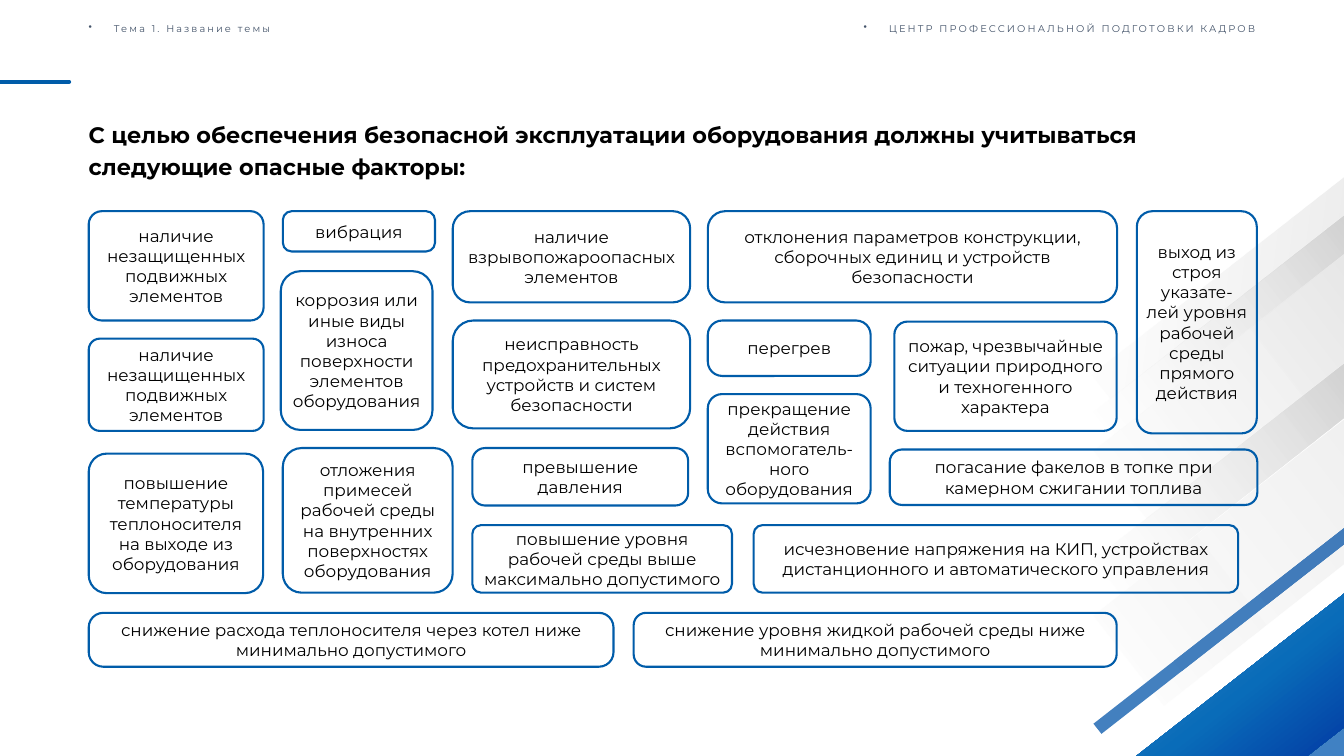
from dataclasses import dataclass

from lxml import etree
from pptx import Presentation
from pptx.dml.color import RGBColor as Rgb
from pptx.enum.shapes import MSO_CONNECTOR as Link, MSO_SHAPE as Kind
from pptx.enum.text import MSO_ANCHOR as Anchor, PP_ALIGN as Align
from pptx.oxml import parse_xml
from pptx.oxml.ns import nsdecls, qn
from pptx.util import Pt

WIDE, HIGH = 1919.5, 1080
FACE = "Montserrat"
HUES = {
    "line": "005CA9", "text": "000000", "head": "44546A",
    "pale": "EDEDED", "mist": "ECECEC", "gray": "D3D3D3", "soft": "E8E8E8",
    "snow": "F1F1F1", "sky": "4380BF", "steel": "417BBA", "light": "4081C3",
    "mid": "096CB9", "deep": "033CA4",
}


@dataclass(frozen=True)
class Stop:
    at: int
    hue: str
    clear: bool = False


@dataclass(frozen=True)
class Band:
    """A stripe from the right edge (top to base) down to its left corners."""
    top: float
    base: float
    left: tuple[tuple[float, float], ...]
    stops: tuple[Stop, ...]
    angle: int = 322


@dataclass(frozen=True)
class Card:
    x: float
    y: float
    w: float
    h: float
    curve: float
    text: str


def fade(hue: str) -> tuple[Stop, ...]:
    return Stop(0, "pale", True), Stop(100, hue)


BANDS = [
    Band(252, 308.2, ((1586.2, 568.8), (1558.8, 534.2)), fade("mist"), 7),
    Band(308.2, 365, ((1589, 622.8), (1561.7, 588.2)), fade("gray")),
    Band(364.3, 519.8, ((1638, 740.9), (1561.7, 643.7)), fade("soft")),
    Band(519.8, 598.3, ((1600.6, 848.2), (1561.7, 799.2)), fade("gray")),
    Band(599, 805.7, ((1662.5, 1007.3), (1561.7, 878.4)), fade("snow")),
    Band(754.6, 777.6, ((1573.2, 1048.3), (1561.7, 1033.9)),
         (Stop(0, "sky"), Stop(100, "steel"))),
    Band(1034.6, HIGH, ((1861, HIGH),), (Stop(0, "light"), Stop(100, "light"))),
    Band(848.2, 1039, ((1867, HIGH), (1622.9, HIGH)),
         (Stop(0, "light"), Stop(56, "mid"), Stop(100, "deep")), 52),
]

# Left edges of the columns and tops of the rows that cards share
COL_A, COL_B, COL_C, COL_D, COL_E = 126.7, 403.9, 646.6, 1010.9, 674.6
ROW_A, ROW_B, ROW_C, ROW_D, ROW_E = 301.7, 457.9, 640.1, 750.2, 875.5
BARE = "наличие незащищенных подвижных элементов"

CARDS = [
    Card(COL_A, ROW_A, 249.8, 156.2, 0.12, BARE),
    Card(COL_B, ROW_A, 217.4, 57.6, 0.22, "вибрация"),
    Card(COL_C, ROW_A, 339.1, 130.3, 0.19,
         "наличие взрывопожароопасных элементов"),
    Card(COL_D, ROW_A, 584.6, 130.3, 0.19,
         "отклонения параметров конструкции, сборочных единиц и устройств безопасности"),
    Card(1277.3, 459.4, 317.5, 156.2, 0.12,
         "пожар, чрезвычайные ситуации природного и техногенного характера"),
    Card(COL_D, ROW_B, 232.6, 79.2, 0.26, "перегрев"),
    Card(401, 387.4, 216.7, 226.8, 0.13,
         "коррозия или иные виды износа поверхности элементов оборудования"),
    Card(COL_A, 483.8, 249.8, 131.8, 0.12, BARE),
    Card(COL_C, ROW_B, 339.1, 154.1, 0.19,
         "неисправность предохранительных устройств и систем безопасности"),
    Card(COL_D, 563, 232.6, 156.2, 0.13,
         "прекращение действия вспомогатель-ного оборудования"),
    Card(1270.8, 642.2, 524.9, 79.2, 0.22,
         "погасание факелов в топке при камерном сжигании топлива"),
    Card(COL_B, ROW_C, 242.6, 206.6, 0.13,
         "отложения примесей рабочей среды на внутренних поверхностях оборудования"),
    Card(COL_E, ROW_C, 308.2, 82.1, 0.22, "превышение давления"),
    Card(COL_E, ROW_D, 370.8, 96.5, 0.13,
         "повышение уровня рабочей среды выше максимально допустимого"),
    Card(1076.4, ROW_D, 691.9, 96.5, 0.13,
         "исчезновение напряжения на КИП, устройствах дистанционного "
         "и автоматического управления"),
    Card(COL_A, 648, 249.1, 199.4, 0.13,
         "повышение температуры теплоносителя на выходе из оборудования"),
    Card(COL_A, ROW_E, 749.5, 77, 0.27,
         "снижение расхода теплоносителя через котел ниже минимально допустимого"),
    Card(905, ROW_E, 689.8, 77, 0.23,
         "снижение уровня жидкой рабочей среды ниже минимально допустимого"),
    Card(1623.6, ROW_A, 171.4, 317.5, 0.13,
         "выход из строя указате-лей уровня рабочей среды прямого действия"),
]


def tint(name: str) -> Rgb:
    return Rgb.from_string(HUES[name])


def style(para, size: float, hue: str, bold: bool = False) -> None:
    font = para.font
    font.name, font.size, font.bold = FACE, Pt(size), bold
    font.color.rgb = tint(hue)


def draw_band(slide, band: Band) -> None:
    spots = [(WIDE, band.base), *band.left]
    pen = slide.shapes.build_freeform(Pt(WIDE), Pt(band.top))
    pen.add_line_segments([(Pt(x), Pt(y)) for x, y in spots], close=True)
    form = pen.convert_to_shape()
    form.shadow.inherit = False
    form.line.fill.background()
    form.fill.background()
    stops = "".join(
        f'<a:gs pos="{stop.at * 1000}"><a:srgbClr val="{HUES[stop.hue]}">'
        f'{"<a:alpha val=" + chr(34) + "0" + chr(34) + "/>" if stop.clear else ""}'
        f'</a:srgbClr></a:gs>' for stop in band.stops)
    grad = parse_xml(
        f'<a:gradFill {nsdecls("a")} rotWithShape="1"><a:gsLst>{stops}</a:gsLst>'
        f'<a:lin ang="{band.angle * 60000}" scaled="0"/></a:gradFill>')
    props = form._element.spPr
    props.replace(props.find(qn("a:noFill")), grad)


def draw_card(slide, card: Card) -> None:
    box = slide.shapes.add_shape(Kind.ROUNDED_RECTANGLE, Pt(card.x), Pt(card.y),
                                 Pt(card.w), Pt(card.h))
    box.adjustments[0] = card.curve
    box.shadow.inherit = False
    box.fill.background()
    box.line.color.rgb = tint("line")
    box.line.width = Pt(3)
    frame = box.text_frame
    frame.word_wrap = True
    frame.vertical_anchor = Anchor.MIDDLE
    para = frame.paragraphs[0]
    para.text = card.text
    para.alignment = Align.CENTER
    style(para, 24, "text")


def add_text(slide, x: float, y: float, w: float, h: float, text: str):
    """Add a wrapped text box without margins; return its frame and paragraph."""
    frame = slide.shapes.add_textbox(Pt(x), Pt(y), Pt(w), Pt(h)).text_frame
    frame.word_wrap = True
    frame.margin_left = frame.margin_right = 0
    frame.margin_top = frame.margin_bottom = 0
    para = frame.paragraphs[0]
    para.text = text
    para.space_before = Pt(20)
    return frame, para


def draw_head(slide, x: float, w: float, text: str) -> None:
    frame, para = add_text(slide, x, 0, w, 71.3, text)
    frame.margin_bottom = Pt(22.3)
    frame.vertical_anchor = Anchor.BOTTOM
    para.line_spacing = Pt(56)
    style(para, 14, "head")
    props = para._p.get_or_add_pPr()
    props.set("marL", str(Pt(36)))
    props.set("indent", str(-Pt(36)))
    mark = etree.Element(qn("a:buChar"), char="•")
    props.find(qn("a:defRPr")).addprevious(mark)
    para.runs[0]._r.get_or_add_rPr().set("spc", "300")


def draw_rule(slide) -> None:
    rule = slide.shapes.add_connector(Link.STRAIGHT, 0, Pt(116.6), Pt(98.6), Pt(116.6))
    rule.line.color.rgb = tint("line")
    rule.line.width = Pt(6)
    rule.line._get_or_add_ln().set("cap", "rnd")
    etree.SubElement(rule._element.spPr, qn("a:effectLst"))


def main() -> None:
    deck = Presentation()
    deck.slide_width, deck.slide_height = Pt(WIDE), Pt(HIGH)
    slide = deck.slides.add_slide(deck.slide_layouts[6])
    draw_rule(slide)
    draw_head(slide, COL_A, 479.5, "Тема 1. Название темы")
    for band in BANDS:
        draw_band(slide, band)
    draw_head(slide, 1233.4, 575.3, "ЦЕНТР ПРОФЕССИОНАЛЬНОЙ ПОДГОТОВКИ КАДРОВ")
    title = add_text(slide, COL_A, 165.6, 1669.7, 57.6,
                     "С целью обеспечения безопасной эксплуатации оборудования "
                     "должны учитываться следующие опасные факторы:")[1]
    title.line_spacing = 1.2
    style(title, 32, "text", bold=True)
    for card in CARDS:
        draw_card(slide, card)
    deck.save("out.pptx")


if __name__ == "__main__":
    main()
